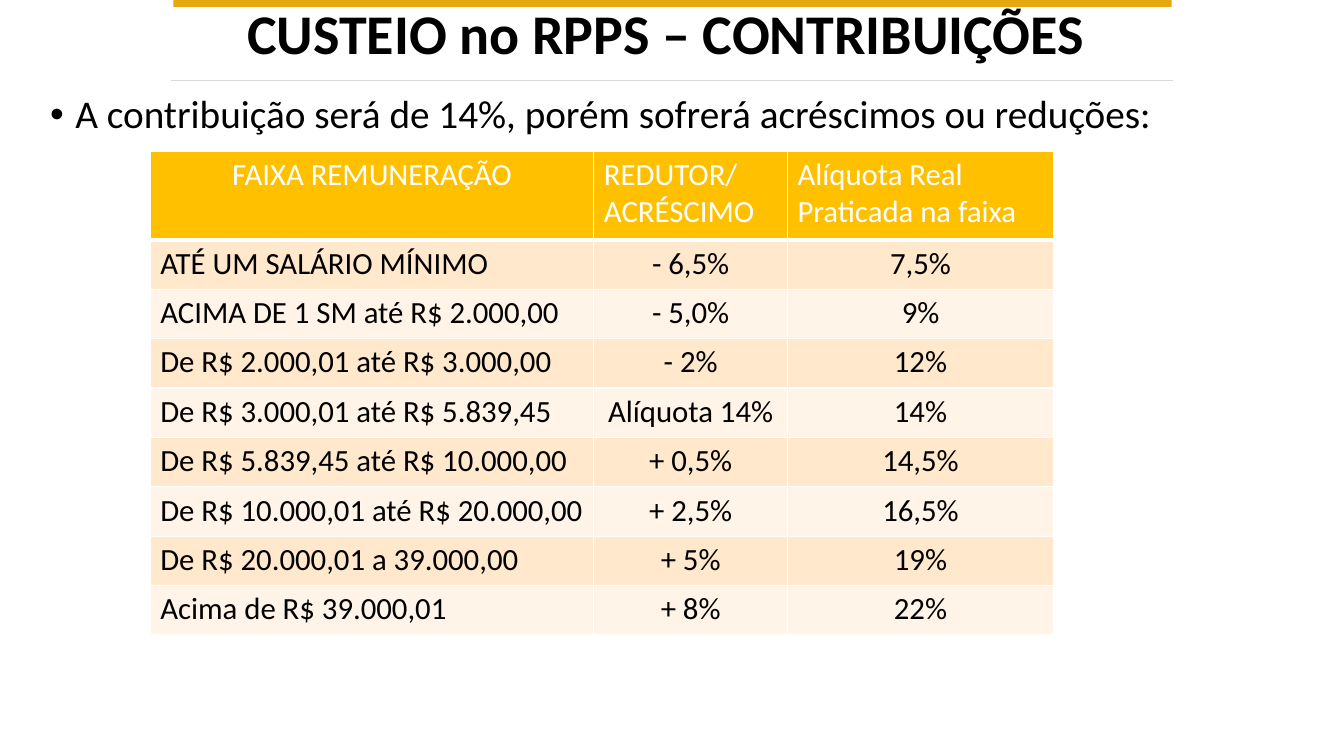
"""Build the slide on RPPS contribution rates by pay band."""
import lxml.etree
import pptx
import pptx.dml.color
import pptx.enum.shapes
import pptx.enum.text
import pptx.oxml.ns
import pptx.util

TITLE = "CUSTEIO no RPPS – CONTRIBUIÇÕES "
INTRODUCTION = "A contribuição será de 14%, porém sofrerá acréscimos ou reduções:"
HEADERS = ("FAIXA REMUNERAÇÃO", "REDUTOR/\nACRÉSCIMO", "Alíquota Real\nPraticada na faixa")
BANDS = [
    ("ATÉ UM SALÁRIO MÍNIMO", "- 6,5%", "7,5%"),
    ("ACIMA DE 1 SM até R$ 2.000,00", "- 5,0%", "9%"),
    ("De R$ 2.000,01 até R$ 3.000,00", "- 2%", "12%"),
    ("De R$ 3.000,01 até R$ 5.839,45", "Alíquota 14%", "14%"),
    ("De R$ 5.839,45 até R$ 10.000,00", "+ 0,5%", "14,5%"),
    ("De R$ 10.000,01 até R$ 20.000,00", "+ 2,5%", "16,5%"),
    ("De R$ 20.000,01 a 39.000,00", "+ 5%", "19%"),
    ("Acima de R$ 39.000,01", "+ 8%", "22%"),
]
COLORS = {"bar": "E5A812", "rule": "D9D9D9", "header": "FFC000", "odd": "FFE8CC",
          "even": "FFF4E7", "white": "FFFFFF", "black": "000000"}
FONT = "Calibri"
WIDTH, HEIGHT = 13.33, 7.5
MARGIN = 0.4
TEXT_WIDTH = WIDTH - 2 * MARGIN
TITLE_TOP, BODY_TOP, BODY_HEIGHT = 0.01, 0.89, 5.71
TABLE_LEFT, TABLE_TOP = 1.49, 1.5
COLUMN_WIDTHS = (4.4, 1.92, 2.64)
HEADER_HEIGHT, BAND_HEIGHT = 0.88, 0.49

Inches = pptx.util.Inches
ALIGN = pptx.enum.text.PP_ALIGN


def color(name):
    return pptx.dml.color.RGBColor.from_string(COLORS[name])


def add_xml(parent, tag, **attributes):
    return lxml.etree.SubElement(parent, pptx.oxml.ns.qn(tag), attributes)


def style(paragraph, size, color_name, alignment=ALIGN.LEFT, bold=False):
    paragraph.alignment = alignment
    for run in paragraph.runs:
        run.font.name = FONT
        run.font.size = pptx.util.Pt(size)
        run.font.bold = bold
        run.font.color.rgb = color(color_name)


def add_text(slide, text, top, height):
    box = slide.shapes.add_textbox(*map(Inches, (MARGIN, top, TEXT_WIDTH, height)))
    box.text_frame.word_wrap = True
    box.text_frame.text = text
    paragraph = box.text_frame.paragraphs[0]
    paragraph.line_spacing = 0.9
    return paragraph


def add_decoration(slide):
    bar = slide.shapes.add_shape(pptx.enum.shapes.MSO_SHAPE.RECTANGLE,
                                 *map(Inches, (1.72, 0, 9.9, 0.07)))
    bar.shadow.inherit = False
    bar.fill.solid()
    bar.fill.fore_color.rgb = color("bar")
    bar.line.fill.background()
    rule = slide.shapes.add_connector(pptx.enum.shapes.MSO_CONNECTOR.STRAIGHT,
                                      *map(Inches, (1.7, 0.8, 11.63, 0.8)))
    rule.line.color.rgb = color("rule")
    rule.line.width = pptx.util.Pt(0.5)
    add_xml(rule._element.spPr, "a:effectLst")


def set_borders(cell, bottom):
    properties = cell._tc.get_or_add_tcPr()
    for tag, width in (("a:lnL", 1), ("a:lnR", 1), ("a:lnT", 1), ("a:lnB", bottom)):
        border = add_xml(properties, tag, w=str(pptx.util.Pt(width)))
        add_xml(add_xml(border, "a:solidFill"), "a:srgbClr", val=COLORS["white"])


def add_rates(slide):
    rows = [HEADERS, *BANDS]
    heights = [HEADER_HEIGHT] + [BAND_HEIGHT] * len(BANDS)
    table = slide.shapes.add_table(
        len(rows), len(HEADERS),
        *map(Inches, (TABLE_LEFT, TABLE_TOP, sum(COLUMN_WIDTHS), sum(heights)))).table
    for column, width in zip(table.columns, COLUMN_WIDTHS):
        column.width = Inches(width)
    for row_index, (texts, height) in enumerate(zip(rows, heights)):
        table.rows[row_index].height = Inches(height)
        is_header = row_index == 0
        fill = "header" if is_header else "odd" if row_index % 2 else "even"
        for column_index, text in enumerate(texts):
            cell = table.cell(row_index, column_index)
            set_borders(cell, 3 if is_header else 1)
            cell.fill.solid()
            cell.fill.fore_color.rgb = color(fill)
            cell.text_frame.text = text
            centered = is_header == (column_index == 0)
            for paragraph in cell.text_frame.paragraphs:
                style(paragraph, 22, "white" if is_header else "black",
                      ALIGN.CENTER if centered else ALIGN.LEFT)


def main():
    presentation = pptx.Presentation()
    presentation.slide_width = Inches(WIDTH)
    presentation.slide_height = Inches(HEIGHT)
    slide = presentation.slides.add_slide(presentation.slide_layouts[6])
    add_decoration(slide)
    style(add_text(slide, TITLE, TITLE_TOP, BODY_TOP), 40, "black", ALIGN.CENTER, bold=True)
    introduction = add_text(slide, INTRODUCTION, BODY_TOP, BODY_HEIGHT)
    properties = introduction._p.get_or_add_pPr()
    properties.set("marL", str(Inches(0.25)))
    properties.set("indent", str(Inches(-0.25)))
    add_xml(properties, "a:buFont", typeface="Arial")
    add_xml(properties, "a:buChar", char="•")
    style(introduction, 28, "black")
    add_rates(slide)
    presentation.save("out.pptx")


if __name__ == "__main__":
    main()
